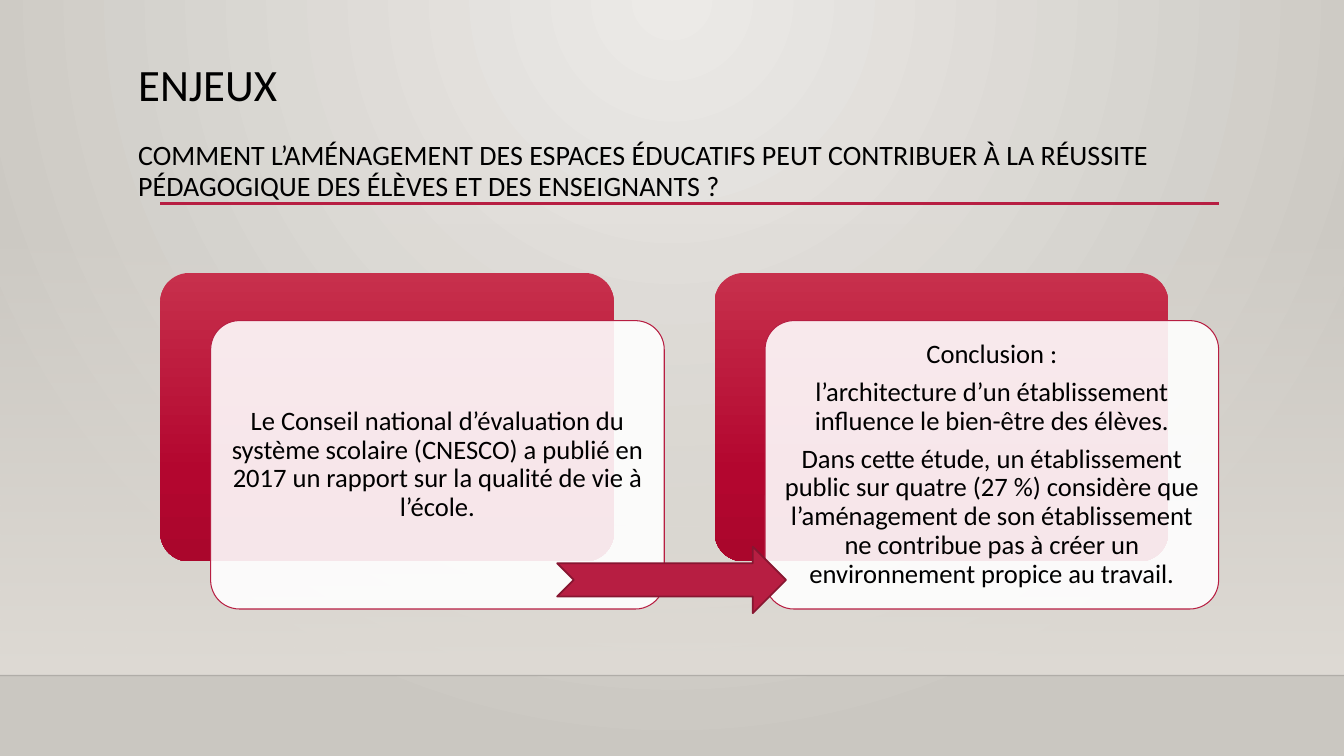
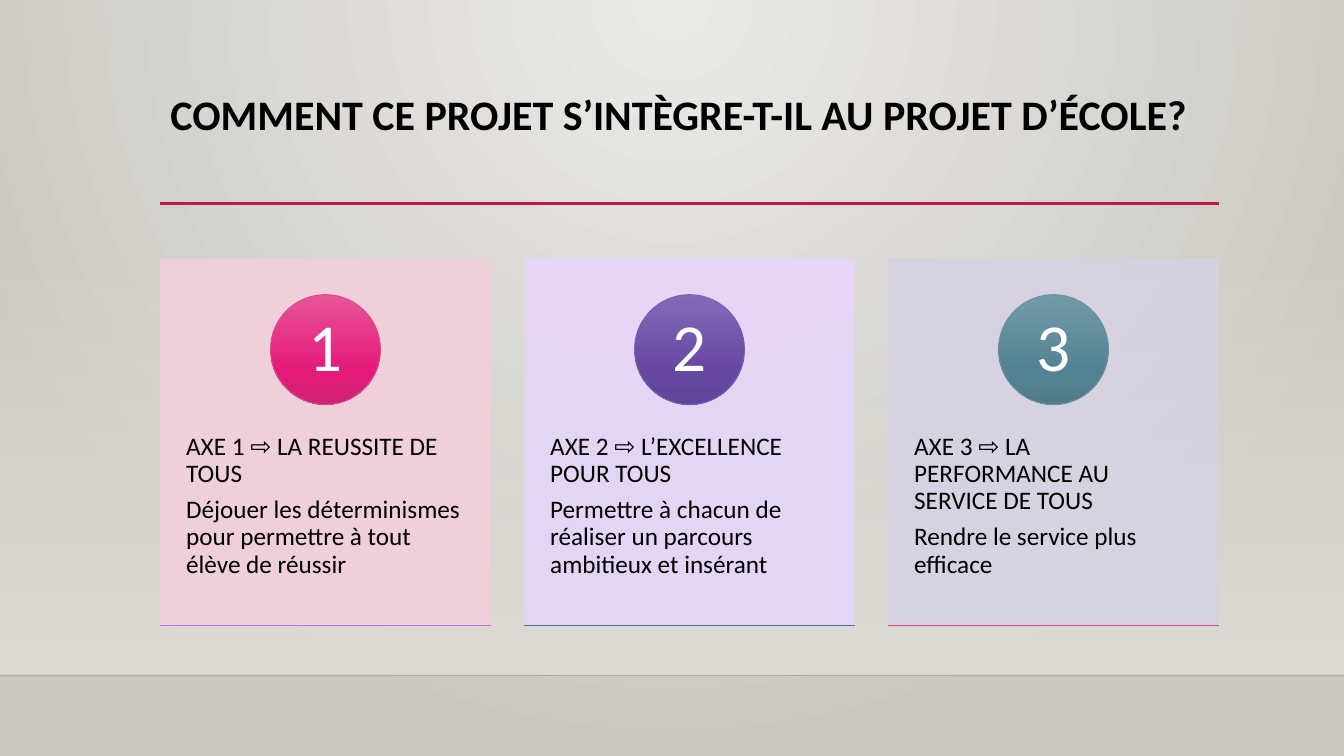
from lxml import etree
from pptx import Presentation, oxml
from pptx.dml.color import RGBColor
from pptx.enum import shapes, text
from pptx.oxml import ns
from pptx.util import Pt

BLACK = RGBColor(0x00, 0x00, 0x00)
WHITE = RGBColor(0xFF, 0xFF, 0xFF)
CRIMSON = RGBColor(0xB7, 0x1E, 0x42)
DARK_CRIMSON = RGBColor(0x87, 0x16, 0x31)
ROSE = RGBColor(0xF2, 0xCF, 0xDB)
LILAC = RGBColor(0xE7, 0xD5, 0xF9)
LAVENDER = RGBColor(0xD7, 0xD2, 0xE3)
PINK = RGBColor(0xDE, 0x47, 0x8E)
PURPLE = RGBColor(0x79, 0x5F, 0xAF)
TEAL = RGBColor(0x68, 0x92, 0xA0)
VIOLET = RGBColor(0xBC, 0x72, 0xF0)
BLUE = RGBColor(0x58, 0x6E, 0xA6)
WALL_LIGHT = RGBColor(0xEC, 0xEA, 0xE7)
WALL_DARK = RGBColor(0xCA, 0xC7, 0xC1)
HAZE = RGBColor(0xDF, 0xDB, 0xD5)


def glossy(top, middle, bottom):
    """Gradient stops as (position, colour, opacity), in percent."""
    colours = (RGBColor.from_string(code) for code in (top, middle, bottom))
    return [(place, colour, 100) for place, colour in zip((0, 69, 100), colours)]


CRIMSON_GLOSS = glossy("C7304C", "B3062F", "AA062C")
PINK_GLOSS = glossy("E75597", "E51A79", "CF2374")
PURPLE_GLOSS = glossy("836AB8", "6648A3", "60459A")
TEAL_GLOSS = glossy("729BA9", "538393", "4F7C8B")
WALL_STOPS = [(0, WALL_LIGHT, 100), (100, WALL_DARK, 100)]
HAZE_STOPS = [(0, HAZE, 0), (100, HAZE, 100)]

FONT = "Calibri"
PAGE_WIDTH, PAGE_HEIGHT = 960, 540
LEFT, CONTENT_WIDTH = 114.5, 756.5
FLOOR = 482.5
PARA_GAP = 6.5

DOWNWARD = '<a:lin ang="5400000" scaled="0"/>'
FROM_TOP = '<a:path path="circle"><a:fillToRect l="43000" t="0" r="43000" b="100000"/></a:path>'


def set_all(target, **values):
    for name, value in values.items():
        setattr(target, name, value)


def paint_gradient(owner, fill, stops, direction=DOWNWARD):
    fill.gradient()
    stop_xml = "".join(
        f'<a:gs pos="{place * 1000}"><a:srgbClr val="{colour}">'
        f'<a:alpha val="{opacity * 1000}"/></a:srgbClr></a:gs>'
        for place, colour, opacity in stops)
    gradient = owner.find(".//" + ns.qn("a:gradFill"))
    gradient.getparent().replace(gradient, oxml.parse_xml(
        f'<a:gradFill {ns.nsdecls("a")} rotWithShape="1">'
        f'<a:gsLst>{stop_xml}</a:gsLst>{direction}</a:gradFill>'))


def fade(shape, opacity):
    """Give the colours set so far an opacity in percent."""
    for colour in shape._element.spPr.iter(ns.qn("a:srgbClr")):
        etree.SubElement(colour, ns.qn("a:alpha"), val=str(opacity * 1000))


def add_shape(page, preset, place, fill, opacity=100, line=None, weight=0.75):
    """Draw a preset shape; fill is one colour or a list of gradient stops."""
    shape = page.shapes.add_shape(preset, *map(Pt, place))
    shape.shadow.inherit = False
    if isinstance(fill, RGBColor):
        shape.fill.solid()
        shape.fill.fore_color.rgb = fill
        if opacity < 100:
            fade(shape, opacity)
    else:
        paint_gradient(shape._element, shape.fill, fill)
    if line is None:
        shape.line.fill.background()
    else:
        shape.line.color.rgb = line
        shape.line.width = Pt(weight)
    return shape


def add_rule(page, left, top, width, colour, weight):
    rule = page.shapes.add_connector(
        shapes.MSO_CONNECTOR.STRAIGHT, Pt(left), Pt(top), Pt(left + width), Pt(top))
    rule.line.color.rgb = colour
    rule.line.width = Pt(weight)
    etree.SubElement(rule._element.spPr, ns.qn("a:effectLst"))
    return rule


def write(frame, lines, sizes, gap=PARA_GAP, align=text.PP_ALIGN.LEFT,
          colour=BLACK, bold=False):
    for index, (line, size) in enumerate(zip(lines, sizes)):
        para = frame.paragraphs[0] if index == 0 else frame.add_paragraph()
        set_all(para, alignment=align, line_spacing=0.9,
                space_before=Pt(gap if index else 0), space_after=Pt(0))
        span = para.add_run()
        span.text = line
        set_all(span.font, name=FONT, size=Pt(size), bold=bold)
        span.font.color.rgb = colour


def fill_text(shape, lines, size, margins, anchor=text.MSO_ANCHOR.MIDDLE, **style):
    """Write into a shape; margins are left, top, right and bottom."""
    frame = shape.text_frame
    left, top, right, bottom = map(Pt, margins)
    set_all(frame, word_wrap=True, vertical_anchor=anchor, margin_left=left,
            margin_top=top, margin_right=right, margin_bottom=bottom)
    write(frame, lines, [size] * len(lines), **style)


def set_title(page, place, lines, sizes, **style):
    title = page.shapes.title
    set_all(title, **dict(zip(("left", "top", "width", "height"), map(Pt, place))))
    set_all(title.text_frame, word_wrap=True, auto_size=text.MSO_AUTO_SIZE.NONE,
            vertical_anchor=text.MSO_ANCHOR.TOP)
    write(title.text_frame, lines, sizes, **style)


def decorate(deck, layout, page):
    """Set the shared backdrop, moving its parts from the page to the layout."""
    master = deck.slide_master
    paint_gradient(master._element, master.background.fill, WALL_STOPS, FROM_TOP)
    haze = add_shape(page, shapes.MSO_SHAPE.RECTANGLE,
                     (0, 159, PAGE_WIDTH, FLOOR - 159), HAZE_STOPS)
    floor_line = add_rule(page, 0, FLOOR, PAGE_WIDTH, BLACK, 1)
    fade(floor_line, 20)
    title_rule = add_rule(page, LEFT, 145.25, CONTENT_WIDTH, CRIMSON, 2.5)
    for part in (haze, floor_line, title_rule):
        layout.shapes._spTree.append(part._element)


def add_stacked_card(page, left, lines):
    width, height, top = 324, 206, 195
    rounded = shapes.MSO_SHAPE.ROUNDED_RECTANGLE
    back = add_shape(page, rounded, (left, top, width, height), CRIMSON_GLOSS)
    front = add_shape(page, rounded, (left + 36, top + 34, width, height),
                      WHITE, opacity=90, line=CRIMSON)
    for card in (back, front):
        card.adjustments[0] = 0.1
    fill_text(front, lines, 19, [5.5] * 4, align=text.PP_ALIGN.CENTER)


def add_axis_card(page, left, number, lines, tint, gloss, outline, base):
    top, width, height, disc = 184.5, 236, 262, 78.5
    card = add_shape(page, shapes.MSO_SHAPE.RECTANGLE,
                     (left, top, width, height), tint, opacity=90)
    fill_text(card, lines, 18, (18.5, 125, 18.5, 0), text.MSO_ANCHOR.TOP)
    badge = add_shape(page, shapes.MSO_SHAPE.OVAL,
                      (left + (width - disc) / 2, top + 26, disc, disc),
                      gloss, line=outline)
    fill_text(badge, [str(number)], 48, [0] * 4,
              align=text.PP_ALIGN.CENTER, colour=WHITE)
    add_rule(page, left, top + height, width, base, 0.75)


def build_stakes(page):
    set_title(page, (91.5, 41, 756, 104), [
        "ENJEUX",
        "COMMENT L’AMÉNAGEMENT DES ESPACES ÉDUCATIFS PEUT CONTRIBUER À LA RÉUSSITE "
        "PÉDAGOGIQUE DES ÉLÈVES ET DES ENSEIGNANTS ?",
    ], (32, 20), gap=22)
    cards = [
        ["Le Conseil national d’évaluation du système scolaire (CNESCO) a publié en "
         "2017 un rapport sur la qualité de vie à l’école."],
        ["Conclusion :",
         "l’architecture d’un établissement influence le bien-être des élèves.",
         "Dans cette étude, un établissement public sur quatre (27 %) considère que "
         "l’aménagement de son établissement ne contribue pas à créer un "
         "environnement propice au travail."],
    ]
    for index, lines in enumerate(cards):
        add_stacked_card(page, LEFT + 396 * index, lines)
    add_shape(page, shapes.MSO_SHAPE.NOTCHED_RIGHT_ARROW, (398, 390.5, 163.5, 47.5),
              CRIMSON, line=DARK_CRIMSON, weight=1.25)


def build_axes(page):
    set_title(page, (LEFT, 64, 756, 82),
              ["COMMENT CE PROJET S’INTÈGRE-T-IL AU PROJET D’ÉCOLE?"], [30], bold=True)
    axes = [
        (["AXE 1 ⇨ LA REUSSITE DE TOUS",
          "Déjouer les déterminismes pour permettre à tout élève de réussir"],
         ROSE, PINK_GLOSS, PINK, VIOLET),
        (["AXE 2 ⇨ L’EXCELLENCE POUR TOUS",
          "Permettre à chacun de réaliser un parcours ambitieux et insérant"],
         LILAC, PURPLE_GLOSS, PURPLE, BLUE),
        (["AXE 3 ⇨ LA PERFORMANCE AU SERVICE DE TOUS",
          "Rendre le service plus efficace"],
         LAVENDER, TEAL_GLOSS, TEAL, PINK),
    ]
    for index, axis in enumerate(axes):
        add_axis_card(page, LEFT + 260 * index, index + 1, *axis)


def main():
    deck = Presentation()
    set_all(deck, slide_width=Pt(PAGE_WIDTH), slide_height=Pt(PAGE_HEIGHT))
    layout = deck.slide_layouts.get_by_name("Title Only")
    stakes, axes = (deck.slides.add_slide(layout) for _ in range(2))
    decorate(deck, layout, stakes)
    build_stakes(stakes)
    build_axes(axes)
    deck.save("out.pptx")


if __name__ == "__main__":
    main()
